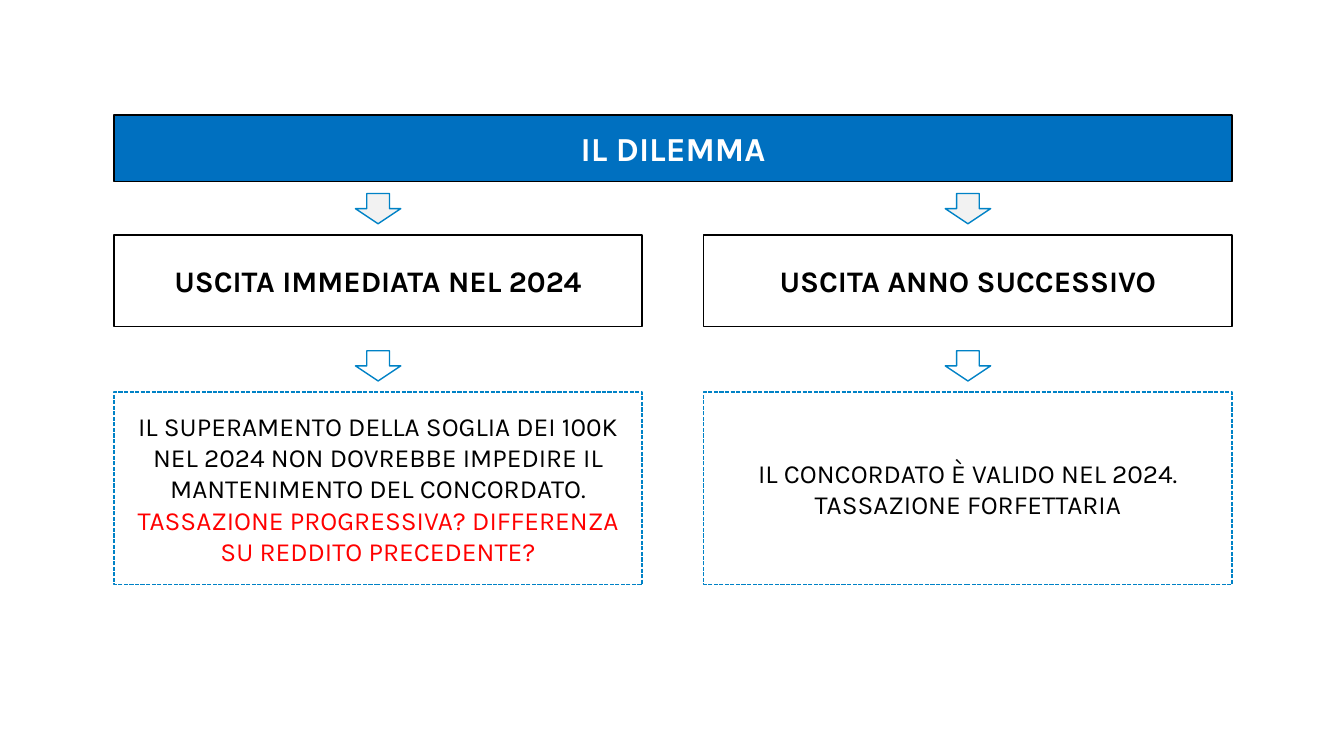
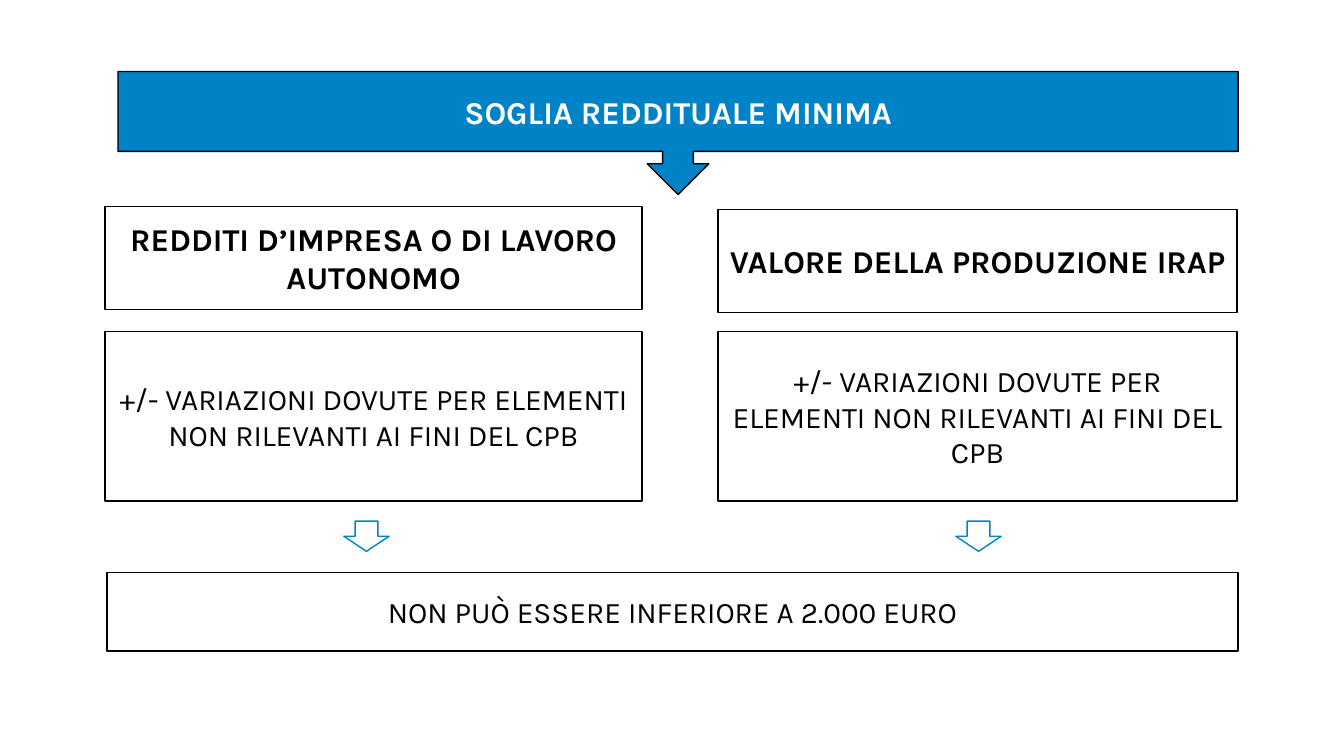
from pptx import Presentation
from pptx.dml.color import RGBColor
from pptx.enum.dml import MSO_LINE
from pptx.enum.shapes import MSO_SHAPE as SHAPE
from pptx.enum.text import MSO_ANCHOR, MSO_AUTO_SIZE, PP_ALIGN
from pptx.util import Inches, Pt

BLACK = RGBColor(0x00, 0x00, 0x00)
WHITE = RGBColor(0xFF, 0xFF, 0xFF)
RED = RGBColor(0xFF, 0x00, 0x00)
GREY = RGBColor(0xF2, 0xF2, 0xF2)
BLUE = RGBColor(0x00, 0x82, 0xC6)
DARK_BLUE = RGBColor(0x00, 0x70, 0xC0)

TITLE_ONLY = 5
ARROW_W, ARROW_H = 0.45, 0.3


class Deck:
    """Shared style and the current slide."""
    font = "Karla"

    def __init__(self):
        self.prs = Presentation()
        self.prs.slide_width = Inches(13.33)
        self.prs.slide_height = Inches(7.5)
        self.slide = None

    def new_slide(self):
        self.slide = self.prs.slides.add_slide(self.prs.slide_layouts[TITLE_ONLY])

    def paint(self, sp, fill, line):
        if fill is None:
            sp.fill.background()
        else:
            sp.fill.solid()
            sp.fill.fore_color.rgb = fill
        if line is None:
            sp.line.fill.background()
        else:
            sp.line.color.rgb = line
            sp.line.width = Pt(1)

    def set_text(self, sp, runs, size, bold=False):
        """Centred text; runs is a list of (text, colour)."""
        tf = sp.text_frame
        tf.word_wrap = True
        tf.auto_size = MSO_AUTO_SIZE.NONE
        tf.vertical_anchor = MSO_ANCHOR.MIDDLE
        p = tf.paragraphs[0]
        p.alignment = PP_ALIGN.CENTER
        for text, color in runs:
            r = p.add_run()
            r.text = text
            r.font.name = self.font
            r.font.size = Pt(size)
            r.font.bold = bold
            r.font.color.rgb = color

    def shape(self, kind, x, y, w, h, fill=None, line=BLACK):
        sp = self.slide.shapes.add_shape(
            kind, Inches(x), Inches(y), Inches(w), Inches(h))
        sp.shadow.inherit = False
        self.paint(sp, fill, line)
        return sp

    def title(self, text, x, y, w, h, size, fill=None, line=None):
        sp = self.slide.shapes.title
        sp.left, sp.top, sp.width, sp.height = map(Inches, (x, y, w, h))
        self.paint(sp, fill, line)
        self.set_text(sp, [(text, WHITE)], size, bold=True)
        # Bring the title in front of what is already drawn
        self.slide.shapes.element.append(sp.element)

    def box(self, runs, x, y, w, h, size, bold=False, fill=None, line=BLACK):
        sp = self.shape(SHAPE.RECTANGLE, x, y, w, h, fill, line)
        self.set_text(sp, runs, size, bold)
        return sp

    def arrow(self, x, y, fill=None):
        self.shape(SHAPE.DOWN_ARROW, x, y, ARROW_W, ARROW_H, fill, BLUE)


def dilemma(deck):
    deck.new_slide()
    deck.title("IL DILEMMA", 1.13, 1.14, 11.09, 0.66, 24, DARK_BLUE, BLACK)

    # Two columns: arrow, option, arrow, consequence
    col_w = 5.24
    columns = [
        (1.13, "USCITA IMMEDIATA NEL 2024",
         [("IL SUPERAMENTO DELLA SOGLIA DEI 100K NEL 2024 NON DOVREBBE "
           "IMPEDIRE IL MANTENIMENTO DEL CONCORDATO. ", BLACK),
          ("TASSAZIONE PROGRESSIVA? DIFFERENZA SU REDDITO PRECEDENTE?", RED)]),
        (6.98, "USCITA ANNO SUCCESSIVO",
         [("IL CONCORDATO È VALIDO NEL 2024. TASSAZIONE FORFETTARIA", BLACK)]),
    ]
    for x, option, consequence in columns:
        arrow_x = x + (col_w - ARROW_W) / 2
        deck.arrow(arrow_x, 1.92, GREY)
        deck.box([(option, BLACK)], x, 2.33, col_w, 0.91, 21.3, bold=True)
        deck.arrow(arrow_x, 3.48)
        sp = deck.box(consequence, x, 3.89, col_w, 1.91, 18.7, line=BLUE)
        sp.line.dash_style = MSO_LINE.SQUARE_DOT


def minimum_threshold(deck):
    deck.new_slide()

    # Callout banner with the title on its body
    x, y, w = 1.17, 0.71, 11.11
    deck.shape(SHAPE.DOWN_ARROW_CALLOUT, x, y, w, 1.22, BLUE)
    deck.title("SOGLIA REDDITUALE MINIMA", x, y, w, 0.79, 22.7)

    # Two columns: tax base, adjustments, arrow
    adjustments = "+/- VARIAZIONI DOVUTE PER ELEMENTI NON RILEVANTI AI FINI DEL CPB"
    columns = [
        (1.04, 2.05, 5.33, 3.41, "REDDITI D’IMPRESA O DI LAVORO AUTONOMO"),
        (7.12, 2.08, 5.15, 9.48, "VALORE DELLA PRODUZIONE IRAP"),
    ]
    for x, y, w, arrow_x, base in columns:
        deck.box([(base, BLACK)], x, y, w, 1.02, 22.7, bold=True, fill=WHITE)
        deck.box([(adjustments, BLACK)], x, 3.29, w, 1.68, 21.3, fill=WHITE)
        deck.arrow(arrow_x, 5.17, WHITE)

    # Shared conclusion
    deck.box([("NON PUÒ ESSERE INFERIORE A 2.000 EURO", BLACK)],
             1.06, 5.68, 11.22, 0.78, 21.3, fill=WHITE)


def main():
    deck = Deck()
    dilemma(deck)
    minimum_threshold(deck)
    deck.prs.save("out.pptx")


if __name__ == "__main__":
    main()
